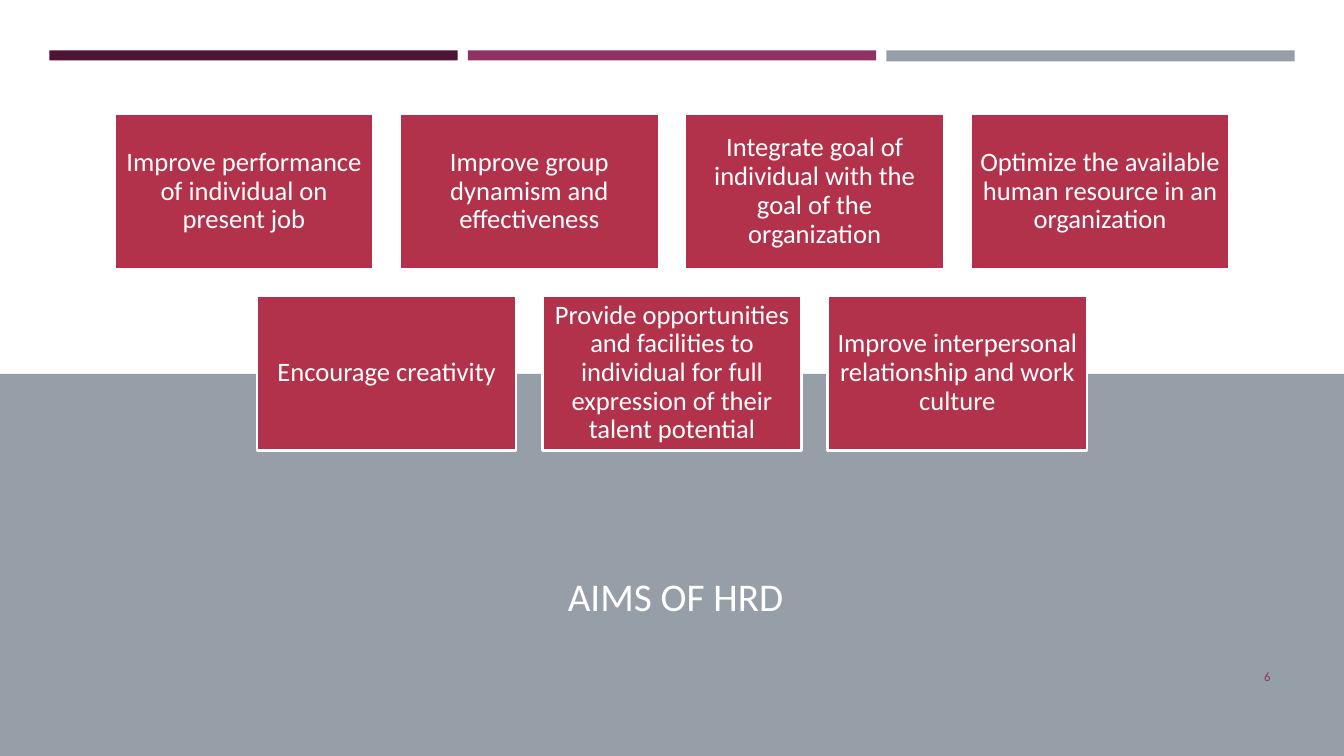
from dataclasses import dataclass

from pptx import Presentation
from pptx.dml.color import RGBColor
from pptx.enum.shapes import MSO_SHAPE as Shape
from pptx.enum.text import MSO_ANCHOR as Anchor, PP_ALIGN as Align
from pptx.shapes.autoshape import Shape as AutoShape
from pptx.slide import Slide
from pptx.text.text import TextFrame
from pptx.util import Inches, Pt

COLORS = {
    "plum": "4D1434",
    "magenta": "903163",
    "gray": "969FA7",
    "red": "B2324B",
    "white": "FFFFFF",
}
FONT = "Calibri"
SLIDE_W, SLIDE_H = 13.33, 7.5
CARD_W, CARD_H = 2.57, 1.54
CARD_STEP_X, CARD_STEP_Y = 2.83, 1.8
CARDS_TOP = 1.13
CARD_INSET = 0.08

AIM_ROWS = [
    [
        "Improve performance of individual on present job",
        "Improve group dynamism and effectiveness",
        "Integrate goal of individual with the goal of the organization",
        "Optimize the available human resource in an organization",
    ],
    [
        "Encourage creativity",
        "Provide opportunities and facilities to individual for full "
        "expression of their talent potential",
        "Improve interpersonal relationship and work culture",
    ],
]


@dataclass
class Block:
    left: float
    top: float
    width: float
    height: float
    color: str


BANDS = [
    Block(0.49, 0.5, 4.05, 0.1, "plum"),
    Block(4.64, 0.5, 4.05, 0.1, "magenta"),
    Block(8.79, 0.5, 4.05, 0.11, "gray"),
    Block(-0.03, 3.71, 13.36, 3.79, "gray"),
]


def rgb(name: str) -> RGBColor:
    return RGBColor.from_string(COLORS[name])


def draw_block(slide: Slide, block: Block) -> AutoShape:
    rect = slide.shapes.add_shape(
        Shape.RECTANGLE, Inches(block.left), Inches(block.top),
        Inches(block.width), Inches(block.height))
    rect.shadow.inherit = False
    rect.fill.solid()
    rect.fill.fore_color.rgb = rgb(block.color)
    rect.line.fill.background()
    return rect


def write(frame: TextFrame, text: str, size: int, color: str,
          align: Align, spacing: float = 1.0) -> None:
    frame.text = text
    frame.word_wrap = True
    frame.vertical_anchor = Anchor.MIDDLE
    paragraph = frame.paragraphs[0]
    paragraph.alignment = align
    paragraph.line_spacing = spacing
    font = paragraph.runs[0].font
    font.name = FONT
    font.size = Pt(size)
    font.color.rgb = rgb(color)


def draw_card(slide: Slide, left: float, top: float, aim: str) -> None:
    card = draw_block(slide, Block(left, top, CARD_W, CARD_H, "red"))
    card.line.color.rgb = rgb("white")
    card.line.width = Pt(1.75)
    frame = card.text_frame
    frame.margin_left = frame.margin_right = Inches(CARD_INSET)
    frame.margin_top = frame.margin_bottom = Inches(CARD_INSET)
    write(frame, aim, 19, "white", Align.CENTER, 0.9)


def main() -> None:
    prs = Presentation()
    prs.slide_width, prs.slide_height = Inches(SLIDE_W), Inches(SLIDE_H)
    slide = prs.slides.add_slide(prs.slide_layouts[5])

    # Top bands and lower panel
    for band in BANDS:
        draw_block(slide, band)

    # Title, raised above the panel
    title = slide.shapes.title
    title.left, title.top = Inches(1.2), Inches(5.3)
    title.width, title.height = Inches(11), Inches(1.3)
    write(title.text_frame, "AIMS OF HRD", 28, "white", Align.CENTER, 0.85)
    slide.shapes.element.append(title.element)

    # Page number
    page_number = slide.shapes.add_textbox(
        Inches(11.55), Inches(6.51), Inches(1.15), Inches(0.4))
    write(page_number.text_frame, "6", 9, "magenta", Align.RIGHT)

    # Aim cards, each row centred on the slide
    for row, aims in enumerate(AIM_ROWS):
        row_width = CARD_W + (len(aims) - 1) * CARD_STEP_X
        row_left = (SLIDE_W - row_width) / 2
        for column, aim in enumerate(aims):
            draw_card(slide, row_left + column * CARD_STEP_X,
                      CARDS_TOP + row * CARD_STEP_Y, aim)

    prs.save("out.pptx")


if __name__ == "__main__":
    main()
